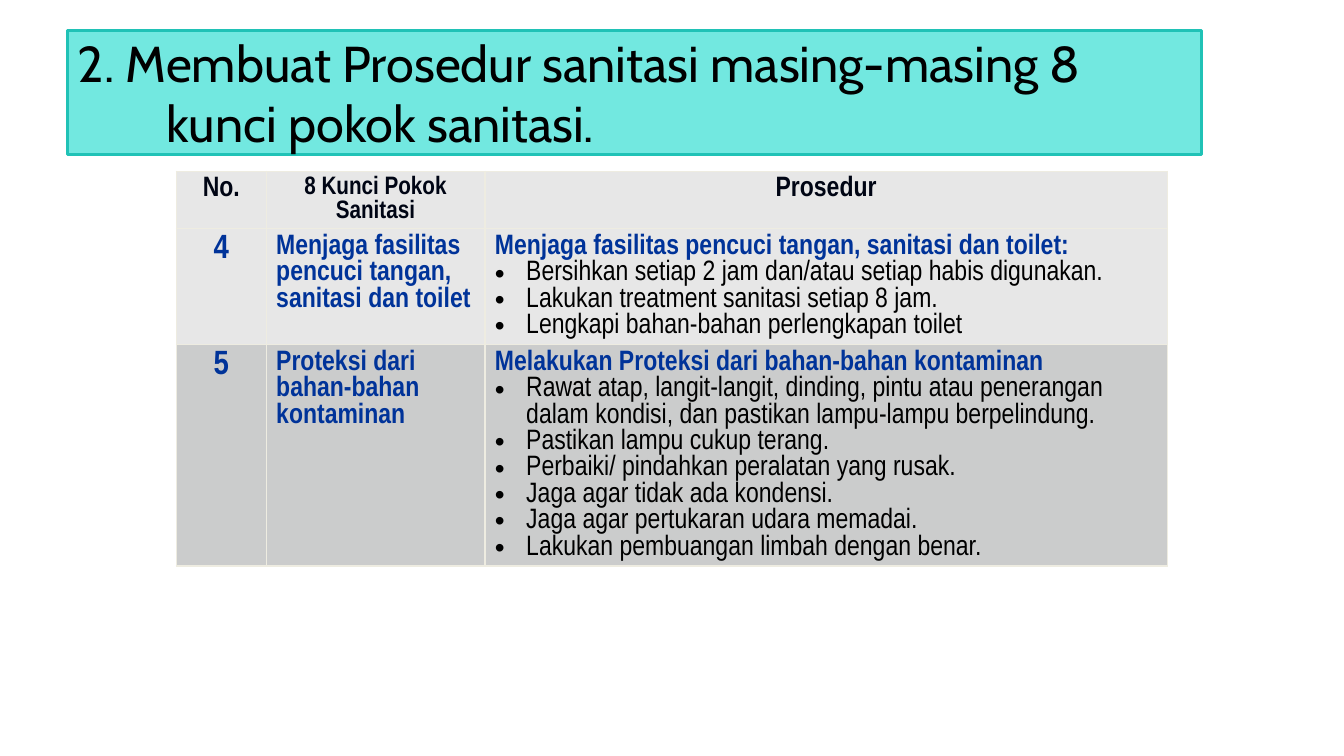
from lxml import etree
from pptx import Presentation
from pptx.dml.color import RGBColor
from pptx.enum.text import MSO_ANCHOR, MSO_AUTO_SIZE, PP_ALIGN
from pptx.oxml import parse_xml
from pptx.oxml.ns import nsdecls, qn
from pptx.util import Inches, Pt

CENTER, LEFT = PP_ALIGN.CENTER, PP_ALIGN.LEFT
BLACK = RGBColor(0x00, 0x00, 0x00)
INK = RGBColor(0x00, 0x05, 0x14)
BLUE = RGBColor(0x00, 0x33, 0x99)
AQUA = RGBColor(0x72, 0xE8, 0xE0)
TEAL = RGBColor(0x20, 0xC2, 0xB6)
LIGHT = RGBColor(0xE7, 0xE7, 0xE7)
GREY = RGBColor(0xCB, 0xCC, 0xCC)
BORDER = RGBColor(0xEE, 0xEC, 0xE1)

COLUMNS = [0.89, 2.17, 6.77]
ROWS = [0.57, 1.15, 2.18]
HEADER = [("No.", 20), ("8 Kunci Pokok Sanitasi", 18), ("Prosedur", 20)]
KEYS = [
    ("4", "Menjaga fasilitas pencuci tangan, sanitasi dan toilet",
     "Menjaga fasilitas pencuci tangan, sanitasi dan toilet:",
     ["Bersihkan setiap 2 jam dan/atau setiap habis digunakan.",
      "Lakukan treatment sanitasi setiap 8 jam.",
      "Lengkapi bahan-bahan perlengkapan toilet"], LIGHT),
    ("5", "Proteksi dari bahan-bahan kontaminan",
     "Melakukan Proteksi dari bahan-bahan kontaminan",
     ["Rawat atap, langit-langit, dinding, pintu atau penerangan dalam kondisi, "
      "dan pastikan lampu-lampu berpelindung.",
      "Pastikan lampu cukup terang.",
      "Perbaiki/ pindahkan peralatan yang rusak.",
      "Jaga agar tidak ada kondensi.",
      "Jaga agar pertukaran udara memadai.",
      "Lakukan pembuangan limbah dengan benar."], GREY),
]


def write(para, text, size, color, align=LEFT, bold=True):
    para.text = text
    para.alignment = align
    font = para.runs[0].font
    font.name, font.size, font.bold = "Arial Narrow", Pt(size), bold
    font.color.rgb = color


def paint(cell, fill):
    """Give the cell a thin border on all four sides and a solid fill."""
    properties = cell._tc.get_or_add_tcPr()
    for side in ("lnL", "lnR", "lnT", "lnB"):
        properties.append(parse_xml(
            f'<a:{side} {nsdecls("a")} w="{Pt(1)}"><a:solidFill>'
            f'<a:srgbClr val="{BORDER}"/></a:solidFill></a:{side}>'))
    cell.fill.solid()
    cell.fill.fore_color.rgb = fill


deck = Presentation()
deck.slide_width, deck.slide_height = Inches(13.33), Inches(7.5)
page = deck.slides.add_slide(deck.slide_layouts[5])

# Title band
title = page.shapes.title
title.left, title.top = Inches(0.67), Inches(0.3)
title.width, title.height = Inches(11.25), Inches(1.23)
title._element.spPr.insert(1, parse_xml(
    f'<a:prstGeom {nsdecls("a")} prst="round2DiagRect"><a:avLst>'
    '<a:gd name="adj1" fmla="val 0"/><a:gd name="adj2" fmla="val 0"/>'
    '</a:avLst></a:prstGeom>'))
title.fill.solid()
title.fill.fore_color.rgb = AQUA
title.line.color.rgb = TEAL
title.line.width = Pt(2)
frame = title.text_frame
frame.text = "2. Membuat Prosedur sanitasi masing-masing 8 kunci pokok sanitasi."
frame.word_wrap = True
frame.auto_size = MSO_AUTO_SIZE.NONE
frame.vertical_anchor = MSO_ANCHOR.MIDDLE
para = frame.paragraphs[0]
para.alignment = LEFT
indent = para._p.get_or_add_pPr()
indent.set("marL", str(Inches(0.88)))
indent.set("indent", str(-Inches(0.88)))
font = para.runs[0].font
font.name, font.size, font.color.rgb = "Cabin", Pt(36), BLACK

# Procedure table
table = page.shapes.add_table(
    len(ROWS), len(COLUMNS), Inches(1.75), Inches(1.7),
    Inches(sum(COLUMNS)), Inches(sum(ROWS))).table
for column, width in zip(table.columns, COLUMNS):
    column.width = Inches(width)
for row, height in zip(table.rows, ROWS):
    row.height = Inches(height)

for cell, (text, size) in zip(table.rows[0].cells, HEADER):
    write(cell.text_frame.paragraphs[0], text, size, INK, CENTER)
    paint(cell, LIGHT)

for row_index, (number, key, heading, steps, fill) in enumerate(KEYS, start=1):
    cells = list(table.rows[row_index].cells)
    styles = [(number, 24, CENTER), (key, 20, LEFT), (heading, 20, LEFT)]
    for cell, (text, size, align) in zip(cells, styles):
        write(cell.text_frame.paragraphs[0], text, size, BLUE, align)
        paint(cell, fill)
    for step in steps:
        para = cells[2].text_frame.add_paragraph()
        bullet = para._p.get_or_add_pPr()
        bullet.set("marL", str(Inches(0.31)))
        bullet.set("indent", str(-Inches(0.31)))
        etree.SubElement(bullet, qn("a:buFont")).set("typeface", "Arial")
        etree.SubElement(bullet, qn("a:buChar")).set("char", "•")
        write(para, step, 20, BLACK, bold=False)

deck.save("out.pptx")
